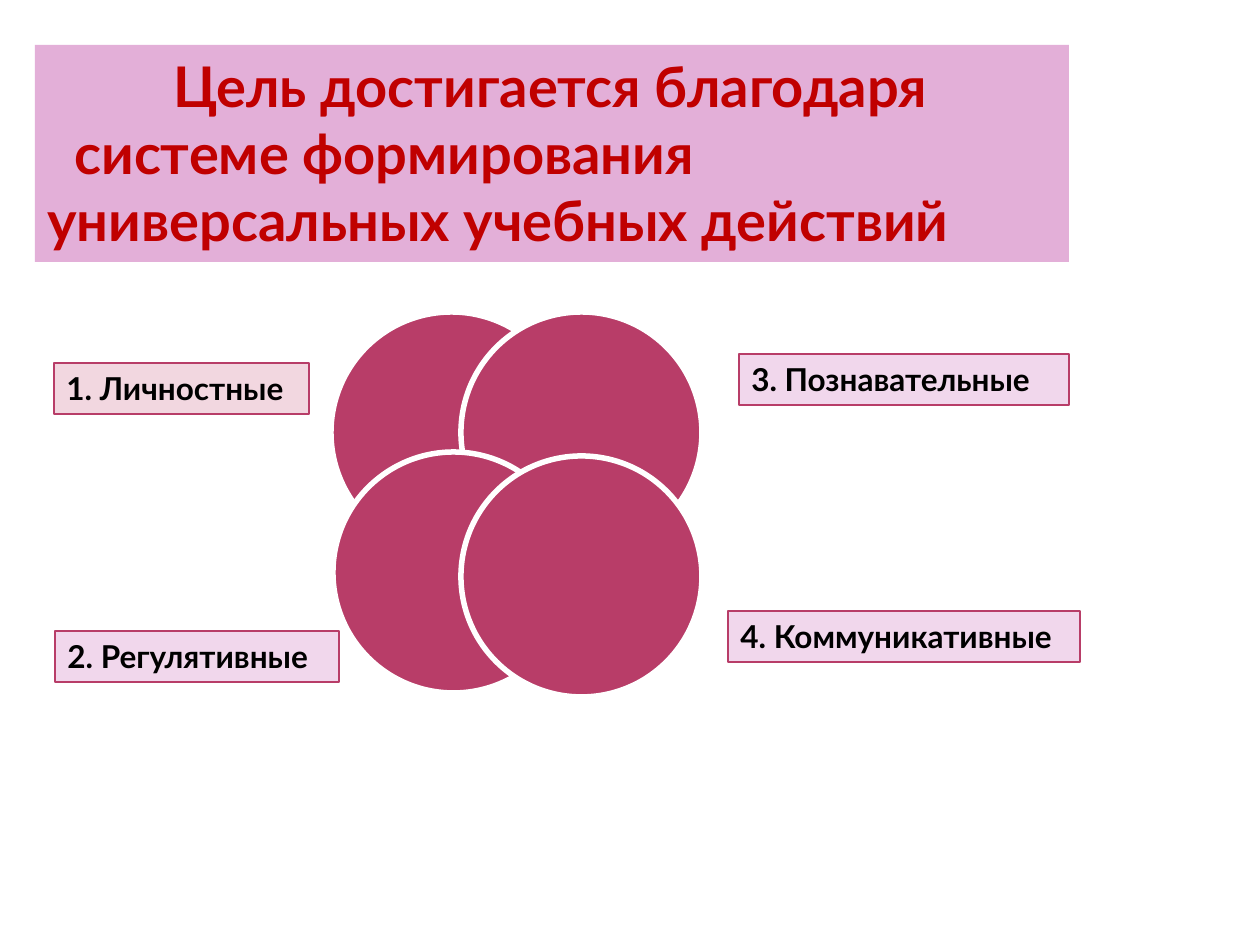
from pptx import Presentation
from pptx.dml.color import RGBColor
from pptx.enum.shapes import MSO_SHAPE
from pptx.enum.text import MSO_AUTO_SIZE as AutoSize, PP_ALIGN as Align
from pptx.util import Pt

PX = 914400 / 126
CRIMSON = "B83D68"
PALE_PINK = "F1D7EC"
LABEL_FONT = {"name": "Lato", "size": Pt(18), "bold": True}
TITLE_FONT = {"name": "Lato", "size": Pt(32), "bold": True}


def px(length):
    return round(length * PX)


def color(hex_code):
    return RGBColor.from_string(hex_code)


def paint(shape, fill, line=None, width=0.75):
    shape.fill.solid()
    shape.fill.fore_color.rgb = color(fill)
    if line:
        shape.line.color.rgb = color(line)
        shape.line.width = Pt(width)


def add_panel(slide, box, lines, font_format, text_color, fill, line=None, wrap=False):
    """Filled text box; lines is a list of (text, left indent in px)."""
    panel = slide.shapes.add_textbox(*map(px, box))
    paint(panel, fill, line)
    frame = panel.text_frame
    frame.word_wrap = wrap
    frame.auto_size = AutoSize.SHAPE_TO_FIT_TEXT
    for index, (text, indent) in enumerate(lines):
        paragraph = frame.add_paragraph() if index else frame.paragraphs[0]
        paragraph.alignment = Align.LEFT
        if indent:
            paragraph._p.get_or_add_pPr().set("marL", str(px(indent)))
        run = paragraph.add_run()
        run.text = text
        for attribute, value in font_format.items():
            setattr(run.font, attribute, value)
        run.font.color.rgb = color(text_color)


def add_title(slide, box):
    lines = [
        ("Цель достигается благодаря", 126),
        ("системе формирования", 27),
        ("универсальных учебных действий", 0),
    ]
    add_panel(slide, box, lines, TITLE_FONT, "C00000", "E3AFD8", wrap=True)


def add_circles(slide, box):
    """Four overlapping circles, offset from the top left of the box."""
    left, top, diameter = box
    for dx, dy in [(0, 0), (130, 0), (2, 140), (130, 144)]:
        circle = slide.shapes.add_shape(
            MSO_SHAPE.OVAL, *map(px, (left + dx, top + dy, diameter, diameter)))
        circle.shadow.inherit = False
        paint(circle, CRIMSON, "FFFFFF", 3.15)


def add_labels(slide, box):
    """Names of the action groups, placed around the circles."""
    left, top, height = box
    labels = [
        ("1. Личностные", 0, 9, 255, "F2D7E0"),
        ("3. Познавательные", 685, 0, 330, PALE_PINK),
        ("2. Регулятивные", 1, 277, 284, PALE_PINK),
        ("4. Коммуникативные", 674, 257, 352, PALE_PINK),
    ]
    for text, dx, dy, width, fill in labels:
        add_panel(slide, (left + dx, top + dy, width, height), [(text, 0)],
                  LABEL_FONT, "000000", fill, CRIMSON)


def main():
    deck = Presentation()
    deck.slide_width, deck.slide_height = px(1260), px(945)
    slide = deck.slides.add_slide(deck.slide_layouts[6])
    add_circles(slide, (331, 312, 241))
    add_labels(slide, (54, 354, 51))
    add_title(slide, (35, 45, 1034, 217))
    deck.save("out.pptx")


if __name__ == "__main__":
    main()
